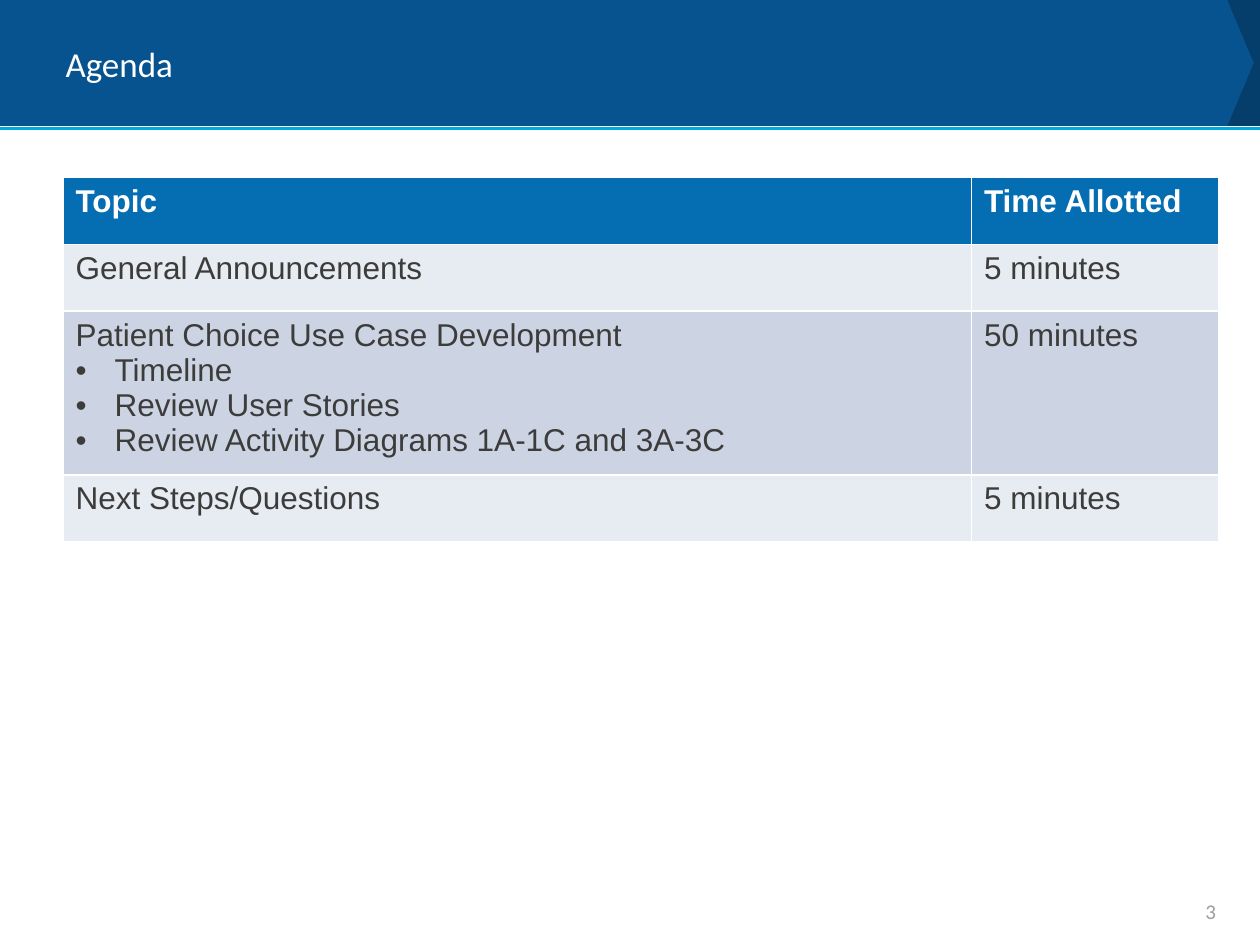
from lxml import etree
from pptx import Presentation
from pptx import util as u
from pptx.dml.color import RGBColor
from pptx.enum import shapes, text
from pptx.oxml.ns import qn

WIDE, HIGH = 10, 7.5
ROW = 0.53
COLS = [7.21, 1.96]
HEAD = {"name": "Arial", "size": u.Pt(18), "bold": True}
BODY = {**HEAD, "bold": False}
NOTE = {"name": "Calibri", "size": u.Pt(12)}
TITLE = {"name": "Calibri", "size": u.Pt(20), "bold": False}
AGENDA = [
    (["Topic"], "Time Allotted"),
    (["General Announcements"], "5 minutes"),
    (["Patient Choice Use Case Development", "Timeline",
      "Review User Stories", "Review Activity Diagrams 1A-1C and 3A-3C"],
     "50 minutes"),
    (["Next Steps/Questions"], "5 minutes"),
]


def box(*sizes):
    return [u.Inches(size) for size in sizes]


def paint(target, color):
    """Give a fill a solid colour."""
    target.solid()
    target.fore_color.rgb = RGBColor.from_string(color)


def style(font, form, color):
    for key, value in form.items():
        setattr(font, key, value)
    paint(font.fill, color)


def add_plate(slide, place, tip, color):
    plate = slide.shapes.add_shape(shapes.MSO_SHAPE.PENTAGON, *box(*place))
    plate.adjustments[0] = tip
    plate.shadow.inherit = False
    paint(plate.fill, color)
    plate.line.fill.background()


def add_rule(slide, top, color):
    rule = slide.shapes.add_connector(
        shapes.MSO_CONNECTOR.STRAIGHT, *box(0, top, WIDE, top))
    rule.line.width = u.Pt(2.25)
    paint(rule.line.fill, color)
    etree.SubElement(rule.element.spPr, qn("a:effectLst"))


def set_title(slide, words):
    title = slide.shapes.title
    title.left, title.top, title.width, title.height = box(0.42, 0.08, 9.17, 0.85)
    title.text_frame.text = words
    title.text_frame.vertical_anchor = text.MSO_ANCHOR.MIDDLE
    line = title.text_frame.paragraphs[0]
    line.alignment = text.PP_ALIGN.LEFT
    style(line.font, TITLE, "FFFFFF")
    slide.shapes.element.append(title.element)  # bring above the band


def add_number(slide, words):
    frame = slide.shapes.add_textbox(*box(7.42, 7.11, 2.33, 0.25)).text_frame
    frame.word_wrap = True
    frame.vertical_anchor = text.MSO_ANCHOR.MIDDLE
    line = frame.paragraphs[0]
    line.text = words
    line.alignment = text.PP_ALIGN.RIGHT
    style(line.font, NOTE, "9E9E9C")


def add_bullet(line):
    props = line._p.get_or_add_pPr()
    indent = u.Inches(0.31)
    props.set("marL", str(indent))
    props.set("indent", str(-indent))
    etree.SubElement(props, qn("a:buFont"), typeface="Arial")
    etree.SubElement(props, qn("a:buChar"), char="•")


def add_border(cell, color):
    props = cell._tc.get_or_add_tcPr()
    for spot, side in enumerate(("lnL", "lnR", "lnT", "lnB")):
        edge = etree.Element(qn(f"a:{side}"), w=str(u.Pt(1)))
        fill = etree.SubElement(edge, qn("a:solidFill"))
        etree.SubElement(fill, qn("a:srgbClr"), val=color)
        props.insert(spot, edge)


def fill_cell(cell, lines, form, ink, back):
    cell.text_frame.text = "\n".join(lines)
    for spot, line in enumerate(cell.text_frame.paragraphs):
        if spot:
            add_bullet(line)
        style(line.font, form, ink)
    paint(cell.fill, back)
    add_border(cell, "FFFFFF")


def add_agenda(slide):
    table = slide.shapes.add_table(
        len(AGENDA), len(COLS),
        *box(0.5, 1.41, sum(COLS), ROW * len(AGENDA))).table
    for column, width in zip(table.columns, COLS):
        column.width = u.Inches(width)
    for row, (topic, time) in enumerate(AGENDA):
        # Each bullet needs one more text line
        extra = max(0, 0.28 * len(topic) + 0.1 - ROW)
        table.rows[row].height = u.Inches(ROW + extra)
        form, ink = (BODY, "3C3C3B") if row else (HEAD, "FFFFFF")
        back = ("CCD4E4", "E7EBF2")[row % 2] if row else "056DB1"
        for col, lines in enumerate((topic, [time])):
            fill_cell(table.cell(row, col), lines, form, ink, back)


def main():
    deck = Presentation()
    deck.slide_width, deck.slide_height = box(WIDE, HIGH)
    slide = deck.slides.add_slide(deck.slide_layouts[5])
    # Header band
    add_plate(slide, (9.55, 0, 0.45, 1), 0, "053E6B")
    add_plate(slide, (0, 0, 9.95, 1), 0.21, "07538F")
    add_rule(slide, 1.02, "00A8E1")
    set_title(slide, "Agenda")
    # Page number and table
    add_number(slide, "3")
    add_agenda(slide)
    deck.save("out.pptx")


if __name__ == "__main__":
    main()
